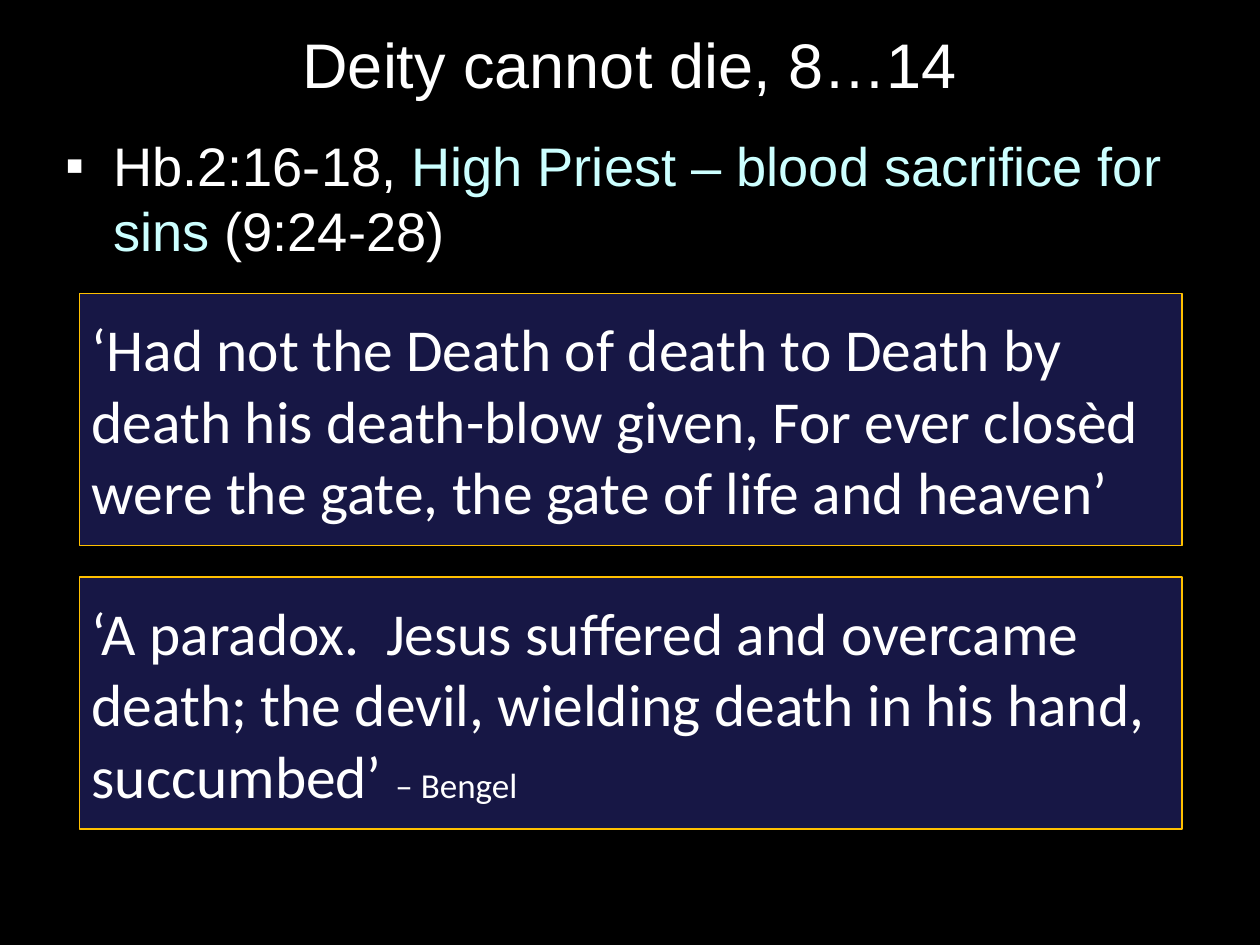
import pptx
import pptx.util
import pptx.dml.color
import pptx.enum.shapes
import pptx.enum.text
import pptx.oxml.ns
from lxml import etree

Inches = pptx.util.Inches
ANCHOR = pptx.enum.text.MSO_ANCHOR
ALIGN = pptx.enum.text.PP_ALIGN
COLORS = {"black": "000000", "white": "FFFFFF", "cyan": "CCFFFF",
          "navy": "171745", "gold": "FFC000"}


def rgb(name):
    return pptx.dml.color.RGBColor.from_string(COLORS[name])


def add_runs(p, font, runs):
    for text, size, color in runs:
        r = p.add_run()
        r.text = text
        r.font.name = font
        r.font.size = pptx.util.Pt(size)
        r.font.color.rgb = rgb(color)


prs = pptx.Presentation()
prs.slide_width = Inches(10)
prs.slide_height = Inches(7.5)
s = prs.slides.add_slide(prs.slide_layouts[6])
s.background.fill.solid()
s.background.fill.fore_color.rgb = rgb("black")

sp = s.shapes.add_textbox(Inches(0.5), Inches(0), Inches(9), Inches(1))
tf = sp.text_frame
tf.word_wrap = True
tf.vertical_anchor = ANCHOR.MIDDLE
p = tf.paragraphs[0]
p.alignment = ALIGN.CENTER
add_runs(p, "Arial", [("Deity cannot die, 8…14", 36, "white")])

sp = s.shapes.add_textbox(Inches(0.42), Inches(1), Inches(9.17), Inches(6.17))
tf = sp.text_frame
tf.word_wrap = True
p = tf.paragraphs[0]
pPr = p._p.get_or_add_pPr()
pPr.set("marL", str(Inches(0.38)))
pPr.set("indent", str(-Inches(0.38)))
etree.SubElement(pPr, pptx.oxml.ns.qn("a:buFont")).set("typeface", "Arial")
etree.SubElement(pPr, pptx.oxml.ns.qn("a:buChar")).set("char", "▪")
add_runs(p, "Arial", [
    ("Hb.2:16-18, ", 31, "white"),
    ("High Priest – blood sacrifice for sins ", 31, "cyan"),
    ("(9:24-28)", 31, "white"),
])

quotes = [
    [("‘Had not the Death of death to Death by death his death-blow given, "
      "For ever closèd were the gate, the gate of life and heaven’", 34, "white")],
    [("‘A paradox.  Jesus suffered and overcame death; the devil, "
      "wielding death in his hand, succumbed’ ", 34, "white"),
     ("– Bengel", 20, "white")],
]
for i, runs in enumerate(quotes):
    sp = s.shapes.add_shape(pptx.enum.shapes.MSO_SHAPE.RECTANGLE, Inches(0.63),
                            Inches(2.33 + 2.25 * i), Inches(8.75), Inches(2))
    sp.shadow.inherit = False
    sp.fill.solid()
    sp.fill.fore_color.rgb = rgb("navy")
    sp.line.color.rgb = rgb("gold")
    sp.line.width = pptx.util.Pt(1)
    tf = sp.text_frame
    tf.word_wrap = True
    tf.vertical_anchor = ANCHOR.MIDDLE
    p = tf.paragraphs[0]
    p.alignment = ALIGN.LEFT
    add_runs(p, "Calibri", runs)

prs.save("out.pptx")
